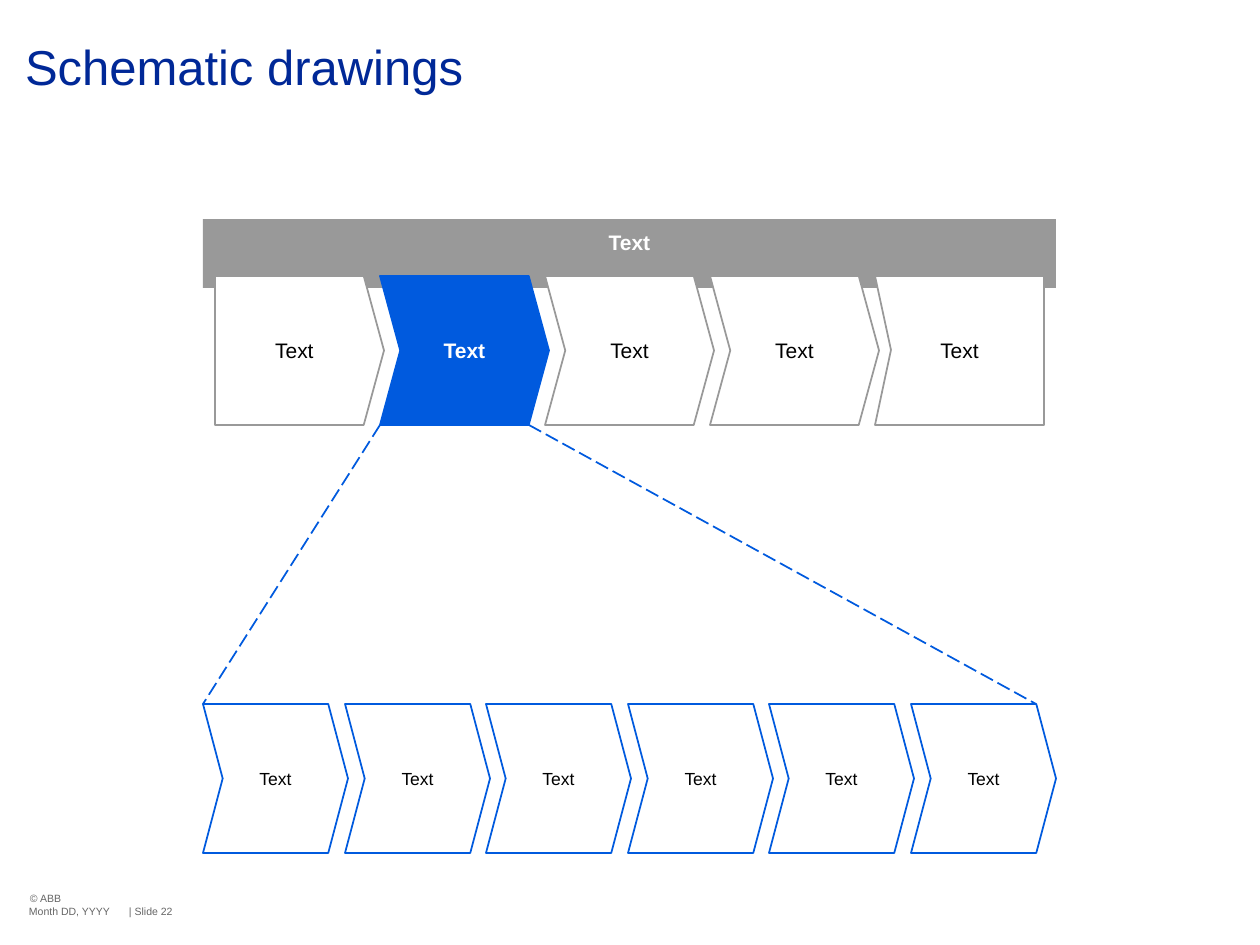
from dataclasses import dataclass

from lxml import etree
from pptx import Presentation
from pptx.dml.color import RGBColor
from pptx.enum.dml import MSO_LINE
from pptx.enum.shapes import MSO_CONNECTOR, MSO_SHAPE
from pptx.enum.text import MSO_ANCHOR, MSO_AUTO_SIZE, PP_ALIGN
from pptx.oxml.ns import qn
from pptx.shapes.autoshape import Shape
from pptx.slide import Slide
from pptx.text.text import TextFrame
from pptx.util import Emu, Pt

RECTANGLE, CHEVRON, PENTAGON = MSO_SHAPE.RECTANGLE, MSO_SHAPE.CHEVRON, MSO_SHAPE.PENTAGON
STRAIGHT, LONG_DASH = MSO_CONNECTOR.STRAIGHT, MSO_LINE.LONG_DASH
TOP, MIDDLE = MSO_ANCHOR.TOP, MSO_ANCHOR.MIDDLE
LEFT, CENTER = PP_ALIGN.LEFT, PP_ALIGN.CENTER

WHITE = RGBColor(0xFF, 0xFF, 0xFF)
BLACK = RGBColor(0x00, 0x00, 0x00)
GREY = RGBColor(0x99, 0x99, 0x99)
DARK_GREY = RGBColor(0x66, 0x66, 0x66)
BLUE = RGBColor(0x00, 0x5A, 0xDE)
NAVY = RGBColor(0x00, 0x28, 0x97)

FONT = "Arial"
EMU_PER_PX = 914400 / 126
POINT_RATIO = 0.136  # depth of an arrow point relative to the arrow height
ARROW_HEIGHT = 149
BAR_LEFT, BAR_WIDTH = 203, 853
STEP_LEFT, STEP_TOP, STEP_WIDTH, STEP_PITCH, STEP_COUNT = 215, 276, 169, 165, 5
DETAIL_TOP, DETAIL_WIDTH, DETAIL_COUNT = 704, 145, 6
ACTIVE_STEP = 1


@dataclass(frozen=True)
class Box:
    left: int
    top: int
    width: int
    height: int


@dataclass(frozen=True)
class Style:
    fill: RGBColor
    line: RGBColor | None
    font_color: RGBColor
    size: int
    bold: bool = False


@dataclass(frozen=True)
class FooterText:
    text: str
    box: Box
    wrap: bool
    anchor: MSO_ANCHOR = TOP


BAR_STYLE = Style(GREY, None, WHITE, 12, True)
STEP_STYLE = Style(WHITE, GREY, BLACK, 12)
ACTIVE_STYLE = Style(BLUE, BLUE, WHITE, 12, True)
DETAIL_STYLE = Style(WHITE, BLUE, BLACK, 10)

FOOTER = [
    FooterText("© ABB", Box(30, 892, 154, 13), False),
    FooterText("| Slide 22", Box(129, 905, 67, 13), True, MIDDLE),
    FooterText("Month DD, YYYY", Box(29, 905, 101, 14), False),
]


def px(length: int) -> Emu:
    return Emu(round(length * EMU_PER_PX))


def place(box: Box) -> tuple[Emu, Emu, Emu, Emu]:
    return px(box.left), px(box.top), px(box.width), px(box.height)


def write(frame: TextFrame, text: str, size: int, color: RGBColor, alignment: PP_ALIGN,
          anchor: MSO_ANCHOR, margins: tuple[int, int, int, int],
          bold: bool = False, wrap: bool = True) -> None:
    """Fill a text frame; margins are left, top, right and bottom in px."""
    frame.text = text
    frame.word_wrap = wrap
    frame.auto_size = MSO_AUTO_SIZE.NONE
    frame.vertical_anchor = anchor
    frame.margin_left, frame.margin_top, frame.margin_right, frame.margin_bottom = map(px, margins)
    paragraph = frame.paragraphs[0]
    paragraph.alignment = alignment
    font = paragraph.runs[0].font
    font.name, font.size, font.bold = FONT, Pt(size), bold
    font.color.rgb = color


def format_shape(shape: Shape, style: Style, anchor: MSO_ANCHOR = MIDDLE) -> None:
    shape.shadow.inherit = False
    shape.fill.solid()
    shape.fill.fore_color.rgb = style.fill
    if style.line is None:
        shape.line.fill.background()
    else:
        shape.line.color.rgb = style.line
        shape.line.width = Pt(1)
    write(shape.text_frame, "Text", style.size, style.font_color, CENTER, anchor,
          (15, 10, 15, 10), style.bold)


def add_arrow(slide: Slide, kind: MSO_SHAPE, box: Box, style: Style) -> None:
    arrow = slide.shapes.add_shape(kind, *place(box))
    arrow.adjustments[0] = POINT_RATIO
    format_shape(arrow, style)


def add_end_step(slide: Slide, box: Box, style: Style) -> None:
    """Draw the last step: notched on the left, flat on the right."""
    right, bottom = box.left + box.width, box.top + box.height
    builder = slide.shapes.build_freeform(right, box.top, scale=EMU_PER_PX)
    builder.add_line_segments([
        (box.left, box.top),
        (box.left + 16, box.top + box.height // 2),
        (box.left, bottom),
        (right, bottom),
    ], close=True)
    format_shape(builder.convert_to_shape(), style)


def add_dashed_line(slide: Slide, start: tuple[int, int], end: tuple[int, int]) -> None:
    connector = slide.shapes.add_connector(STRAIGHT, *map(px, start + end))
    connector.line.color.rgb = BLUE
    connector.line.width = Pt(1)
    connector.line.dash_style = LONG_DASH
    etree.SubElement(connector._element.spPr, qn("a:effectLst"))


def add_title(slide: Slide) -> None:
    title = slide.shapes.title
    title.left, title.top, title.width, title.height = place(Box(0, 0, 1260, 219))
    write(title.text_frame, "Schematic drawings", 28, NAVY, LEFT, TOP, (25, 43, 30, 0))
    title.text_frame.paragraphs[0].line_spacing = 0.9


def add_footer(slide: Slide) -> None:
    for item in FOOTER:
        text_box = slide.shapes.add_textbox(*place(item.box))
        write(text_box.text_frame, item.text, 6, DARK_GREY, LEFT, item.anchor,
              (0, 0, 0, 0), wrap=item.wrap)


def add_process(slide: Slide) -> None:
    bar = slide.shapes.add_shape(RECTANGLE, *place(Box(BAR_LEFT, 219, BAR_WIDTH, 69)))
    format_shape(bar, BAR_STYLE, TOP)
    for index in range(STEP_COUNT):
        box = Box(STEP_LEFT + index * STEP_PITCH, STEP_TOP, STEP_WIDTH, ARROW_HEIGHT)
        style = ACTIVE_STYLE if index == ACTIVE_STEP else STEP_STYLE
        if index == STEP_COUNT - 1:
            add_end_step(slide, box, style)
        else:
            add_arrow(slide, CHEVRON if index else PENTAGON, box, style)


def add_details(slide: Slide) -> None:
    pitch = (BAR_WIDTH - DETAIL_WIDTH) / (DETAIL_COUNT - 1)
    for index in range(DETAIL_COUNT):
        left = BAR_LEFT + round(index * pitch)
        add_arrow(slide, CHEVRON, Box(left, DETAIL_TOP, DETAIL_WIDTH, ARROW_HEIGHT), DETAIL_STYLE)


def add_zoom_lines(slide: Slide) -> None:
    point = round(POINT_RATIO * ARROW_HEIGHT)
    step_left = STEP_LEFT + ACTIVE_STEP * STEP_PITCH
    step_bottom = STEP_TOP + ARROW_HEIGHT
    add_dashed_line(slide, (step_left, step_bottom), (BAR_LEFT, DETAIL_TOP))
    add_dashed_line(slide, (step_left + STEP_WIDTH - point, step_bottom),
                    (BAR_LEFT + BAR_WIDTH - point, DETAIL_TOP))


def main() -> None:
    presentation = Presentation()
    presentation.slide_width, presentation.slide_height = px(1260), px(945)
    slide = presentation.slides.add_slide(presentation.slide_layouts[5])
    add_title(slide)
    add_footer(slide)
    add_process(slide)
    add_details(slide)
    add_zoom_lines(slide)
    presentation.save("out.pptx")


if __name__ == "__main__":
    main()
